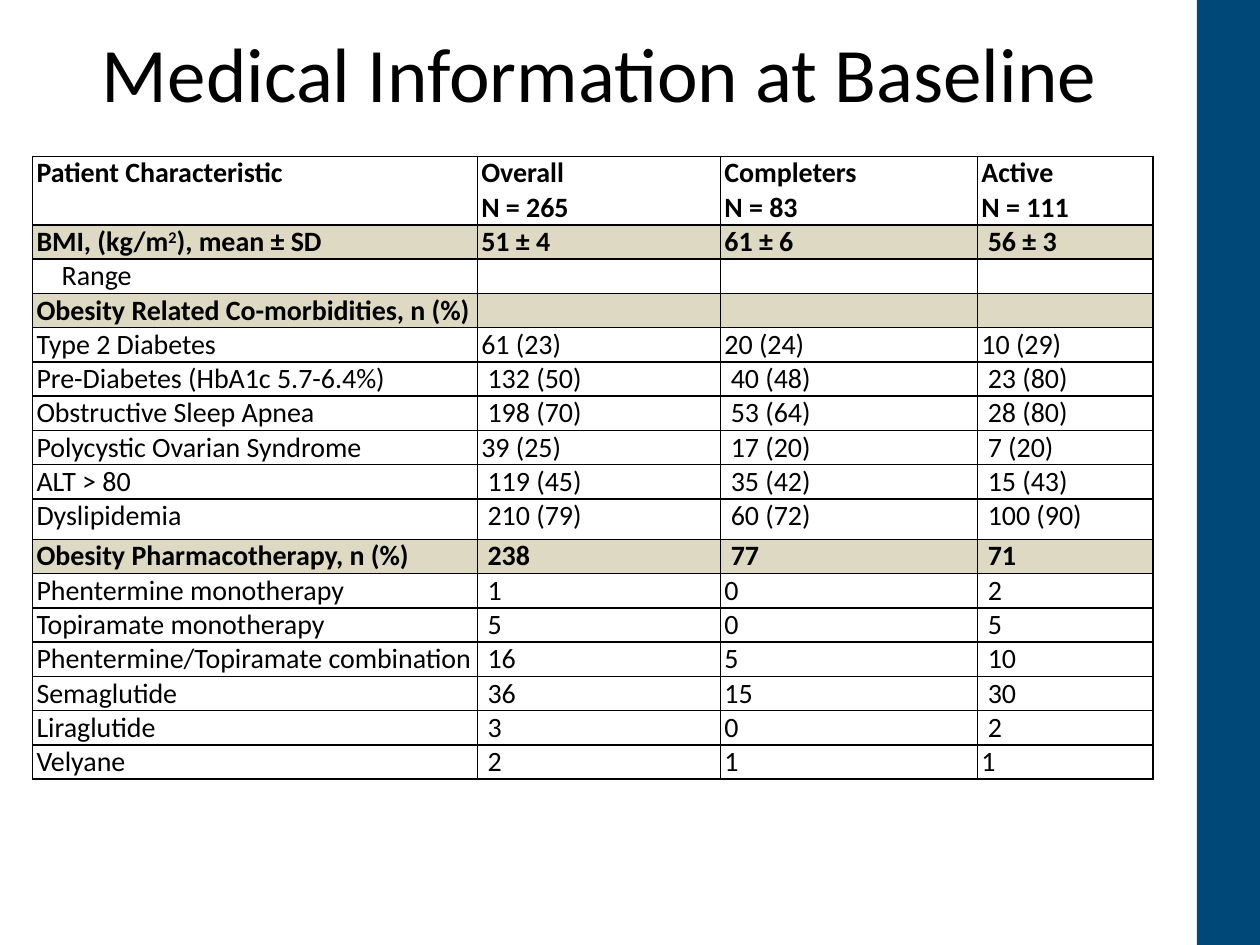
import pptx
import pptx.dml.color
import pptx.enum.shapes
import pptx.enum.text
import pptx.oxml
import pptx.oxml.ns
import pptx.util
from dataclasses import dataclass

Inches = pptx.util.Inches
Pt = pptx.util.Pt
rgb = pptx.dml.color.RGBColor.from_string


@dataclass(frozen=True)
class Theme:
    font: str = "Calibri"
    text: str = "000000"
    accent: str = "004877"
    section: str = "DDD9C3"
    border: str = "000000"
    title_size: int = 44
    table_size: int = 16


theme = Theme()


def add_run(paragraph, text, size, bold=False):
    run = paragraph.add_run()
    run.text = text
    run.font.name = theme.font
    run.font.size = Pt(size)
    run.font.bold = bold
    run.font.color.rgb = rgb(theme.text)
    return run


def add_borders(cell):
    for side in ("lnL", "lnR", "lnT", "lnB"):
        cell._tc.get_or_add_tcPr().append(pptx.oxml.parse_xml(
            f'<a:{side} {pptx.oxml.ns.nsdecls("a")} w="12700"><a:solidFill>'
            f'<a:srgbClr val="{theme.border}"/></a:solidFill></a:{side}>'))


presentation = pptx.Presentation()
presentation.slide_width = Inches(10)
presentation.slide_height = Inches(7.5)
slide = presentation.slides.add_slide(presentation.slide_layouts[5])

side_band = slide.shapes.add_shape(
    pptx.enum.shapes.MSO_SHAPE.RECTANGLE, Inches(9.5), 0, Inches(0.5), Inches(7.5))
side_band.shadow.inherit = False
side_band.fill.solid()
side_band.fill.fore_color.rgb = rgb(theme.accent)
side_band.line.fill.background()

title = slide.shapes.title
title.left, title.top = Inches(0.26), Inches(0.26)
title.width, title.height = Inches(9), Inches(1.45)
title.text_frame.vertical_anchor = pptx.enum.text.MSO_ANCHOR.TOP
heading = title.text_frame.paragraphs[0]
heading.alignment = pptx.enum.text.PP_ALIGN.CENTER
heading.line_spacing = Pt(45)
add_run(heading, "Medical Information at Baseline", theme.title_size)

# Each leading space in a value becomes one indent step.
characteristics = [
    ("Patient Characteristic", "Overall\nN = 265", "Completers\nN = 83", "Active\nN = 111"),
    ("BMI, (kg/m²), mean ± SD", "51 ± 4", "61 ± 6", " 56 ± 3"),
    ("    Range", "", "", ""),
    ("Obesity Related Co-morbidities, n (%)", "", "", ""),
    ("Type 2 Diabetes", "61 (23)", "20 (24)", "10 (29)"),
    ("Pre-Diabetes (HbA1c 5.7-6.4%)", " 132 (50)", " 40 (48)", " 23 (80)"),
    ("Obstructive Sleep Apnea", " 198 (70)", " 53 (64)", " 28 (80)"),
    ("Polycystic Ovarian Syndrome", "39 (25)", " 17 (20)", " 7 (20)"),
    ("ALT > 80", " 119 (45)", " 35 (42)", " 15 (43)"),
    ("Dyslipidemia", " 210 (79)", " 60 (72)", " 100 (90)"),
    ("Obesity Pharmacotherapy, n (%)", " 238", " 77", " 71"),
    ("Phentermine monotherapy", " 1", "0", " 2"),
    ("Topiramate monotherapy", " 5", "0", " 5"),
    ("Phentermine/Topiramate combination", " 16", "5", " 10"),
    ("Semaglutide", " 36", "15", " 30"),
    ("Liraglutide", " 3", "0", " 2"),
    ("Velyane", " 2", "1", "1"),
]
header_row = 0
section_rows = {1, 3, 10}
row_heights = {header_row: 0.52, 9: 0.32}
column_widths = [3.53, 1.93, 2.04, 1.39]
indent_step = 0.05

baseline = slide.shapes.add_table(
    len(characteristics), len(column_widths),
    Inches(0.26), Inches(1.24), Inches(8.9), Inches(4.85)).table
baseline.first_row = False
baseline.horz_banding = False
for column, width in zip(baseline.columns, column_widths):
    column.width = Inches(width)

for row_index, values in enumerate(characteristics):
    baseline.rows[row_index].height = Inches(row_heights.get(row_index, 0.26))
    bold = row_index == header_row or row_index in section_rows
    for column_index, value in enumerate(values):
        cell = baseline.cell(row_index, column_index)
        label = value.lstrip()
        indent = indent_step * (len(value) - len(label))
        cell.margin_left = Inches(0.03 + indent)
        cell.margin_right = Inches(0.03)
        cell.margin_top = cell.margin_bottom = 0
        add_borders(cell)
        if row_index in section_rows:
            cell.fill.solid()
            cell.fill.fore_color.rgb = rgb(theme.section)
        else:
            cell.fill.background()
        for line_index, line in enumerate(label.split("\n")):
            frame = cell.text_frame
            paragraph = frame.add_paragraph() if line_index else frame.paragraphs[0]
            before, exponent, after = line.partition("²")
            if before:
                add_run(paragraph, before, theme.table_size, bold)
            else:
                paragraph._p.get_or_add_endParaRPr().set("sz", str(theme.table_size * 100))
            if exponent:
                power = add_run(paragraph, "2", theme.table_size, bold)
                power.font._element.set("baseline", "30000")
                add_run(paragraph, after, theme.table_size, bold)

presentation.save("out.pptx")
